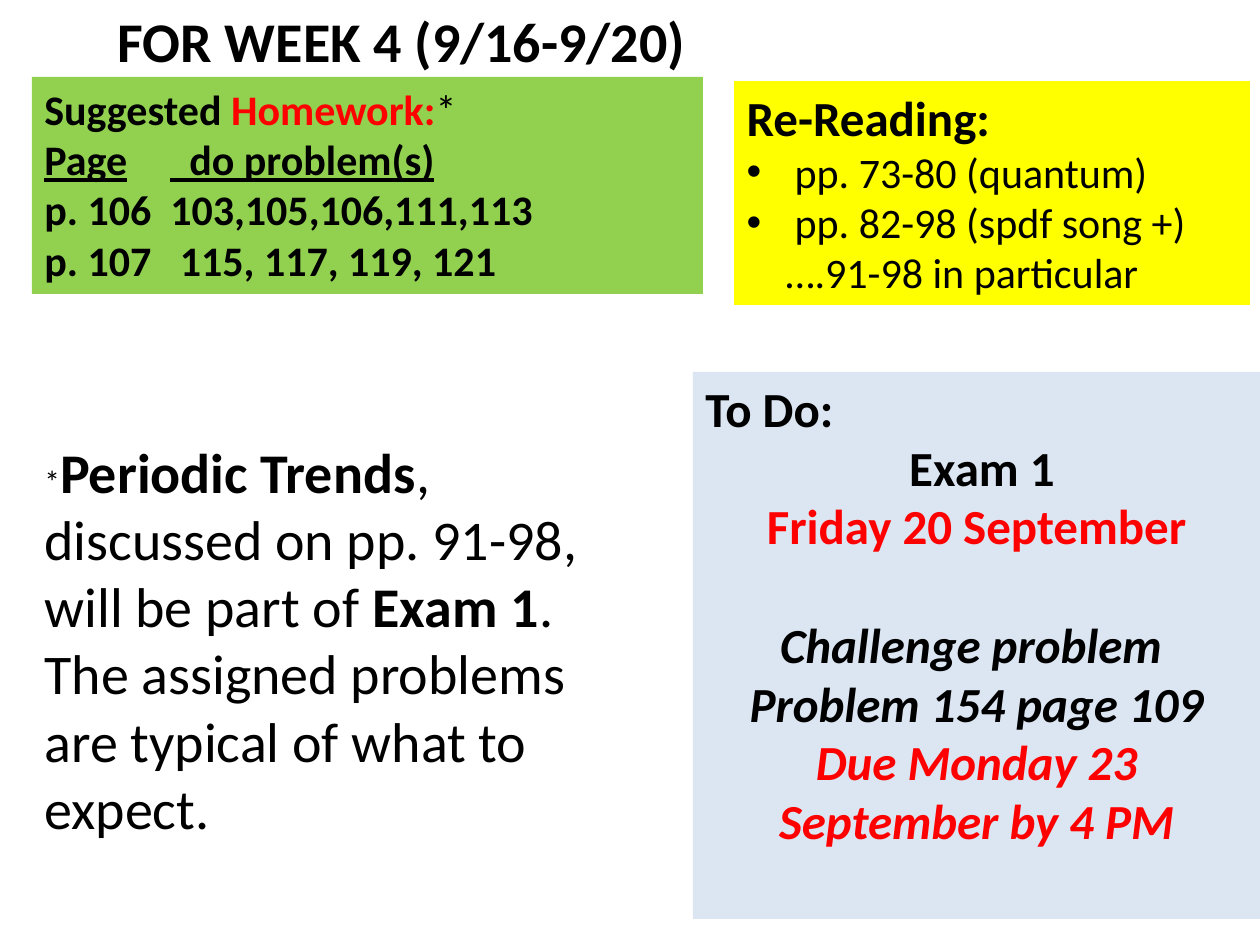
from lxml.etree import SubElement
from pptx import Presentation
from pptx.dml.color import RGBColor
from pptx.enum.shapes import MSO_SHAPE
from pptx.enum.text import MSO_ANCHOR, MSO_AUTO_SIZE, PP_ALIGN
from pptx.oxml.ns import qn
from pptx.util import Emu, Pt

PX_PER_INCH = 126
FONT = "Calibri"
BLACK, RED = "000000", "FF0000"

# Run styles: (size, colour, flags) with b = bold, i = italic, u = underline
TITLE = (32, BLACK, "b")
HEADING = (28, BLACK, "b")
PLAIN = (24, BLACK, "")
BOLD = (24, BLACK, "b")
ALERT = (28, RED, "b")
CHALLENGE = (28, BLACK, "bi")
CHALLENGE_DUE = (28, RED, "bi")
NOTE = (32, BLACK, "")

# Paragraphs: (runs, options); box places: left, top, width, height in px
title = ((105, 0, 630, 81), None, [([("FOR WEEK 4 (9/16-9/20)", TITLE)], {})])

reading = ((734, 81, 516, 224), "FFFF00", [
    ([("Re-Reading:", HEADING)], {}),
    ([("pp. 73-80 (quantum)", PLAIN)], {"indent": 48, "bullet": "•"}),
    ([("pp. 82-98 (spdf song +)", PLAIN)], {"indent": 48, "bullet": "•"}),
    ([("….91-98 in particular", PLAIN)], {"indent": 39}),
])

homework = ((32, 77, 671, 217), "92D050", [
    ([("Suggested ", BOLD), ("Homework:", (24, RED, "b")), ("*", PLAIN)], {}),
    ([("Page\t  do problem(s)", (24, BLACK, "bu"))], {}),
    ([("p. 106\t103,105,106,111,113", BOLD)], {}),
    ([("p. 107\t 115, 117, 119, 121", BOLD)], {}),
])

to_do = ((693, 372, 567, 547), "DCE6F2", [
    ([("To Do:", HEADING)], {}),
    ([(" Exam 1", HEADING)], {"center": True}),
    ([("Friday 20 September", ALERT)], {"center": True}),
    ([("Challenge problem ", CHALLENGE)], {"center": True, "before": 34}),
    ([("Problem 154 page 109", CHALLENGE)], {"center": True}),
    ([("Due Monday 23 September by 4 PM", CHALLENGE_DUE)], {"center": True}),
])

trends_note = ((32, 431, 609, 420), None, [
    ([("*", (18, BLACK, "")), ("Periodic Trends", TITLE),
      (", discussed on pp. 91-98, will be part of ", NOTE), ("Exam 1", TITLE),
      (". The assigned problems are typical of what to expect.", NOTE)], {}),
])


def px(length):
    return Emu(round(length * 914400 / PX_PER_INCH))


def color(hex_value):
    return RGBColor.from_string(hex_value)


def add_run(paragraph, text, style):
    size, hex_value, flags = style
    run = paragraph.add_run()
    run.text = text
    run.font.name = FONT
    run.font.size = Pt(size)
    run.font.color.rgb = color(hex_value)
    run.font.bold = "b" in flags
    run.font.italic = "i" in flags
    run.font.underline = "u" in flags


def format_paragraph(paragraph, indent=0, bullet=None, center=False, before=0):
    paragraph.alignment = PP_ALIGN.CENTER if center else PP_ALIGN.LEFT
    paragraph.space_before = Pt(before)
    properties = paragraph._p.get_or_add_pPr()
    properties.set("marL", str(px(indent)))
    properties.set("indent", str(-px(indent) if bullet else 0))
    if bullet:
        SubElement(properties, qn("a:buFont"), typeface="Arial")
        SubElement(properties, qn("a:buChar"), char=bullet)
    else:
        SubElement(properties, qn("a:buNone"))


def fill_box(box, place, fill, paragraphs):
    box.left, box.top, box.width, box.height = map(px, place)
    if fill:
        box.fill.solid()
        box.fill.fore_color.rgb = color(fill)
    frame = box.text_frame
    frame.word_wrap = True
    frame.auto_size = MSO_AUTO_SIZE.NONE
    frame.vertical_anchor = MSO_ANCHOR.TOP
    for index, (runs, options) in enumerate(paragraphs):
        paragraph = frame.add_paragraph() if index else frame.paragraphs[0]
        format_paragraph(paragraph, **options)
        for text, style in runs:
            add_run(paragraph, text, style)


presentation = Presentation()
presentation.slide_width, presentation.slide_height = px(1260), px(945)
slide = presentation.slides.add_slide(presentation.slide_layouts[1])

# Title and reading list
fill_box(slide.shapes.title, *title)
fill_box(slide.placeholders[1], *reading)

# Coloured panels
for panel_content in (homework, to_do):
    panel = slide.shapes.add_shape(MSO_SHAPE.RECTANGLE, *map(px, panel_content[0]))
    panel.shadow.inherit = False
    panel.line.fill.background()
    fill_box(panel, *panel_content)

# Note on the starred homework
fill_box(slide.shapes.add_textbox(*map(px, trends_note[0])), *trends_note)

presentation.save("out.pptx")
